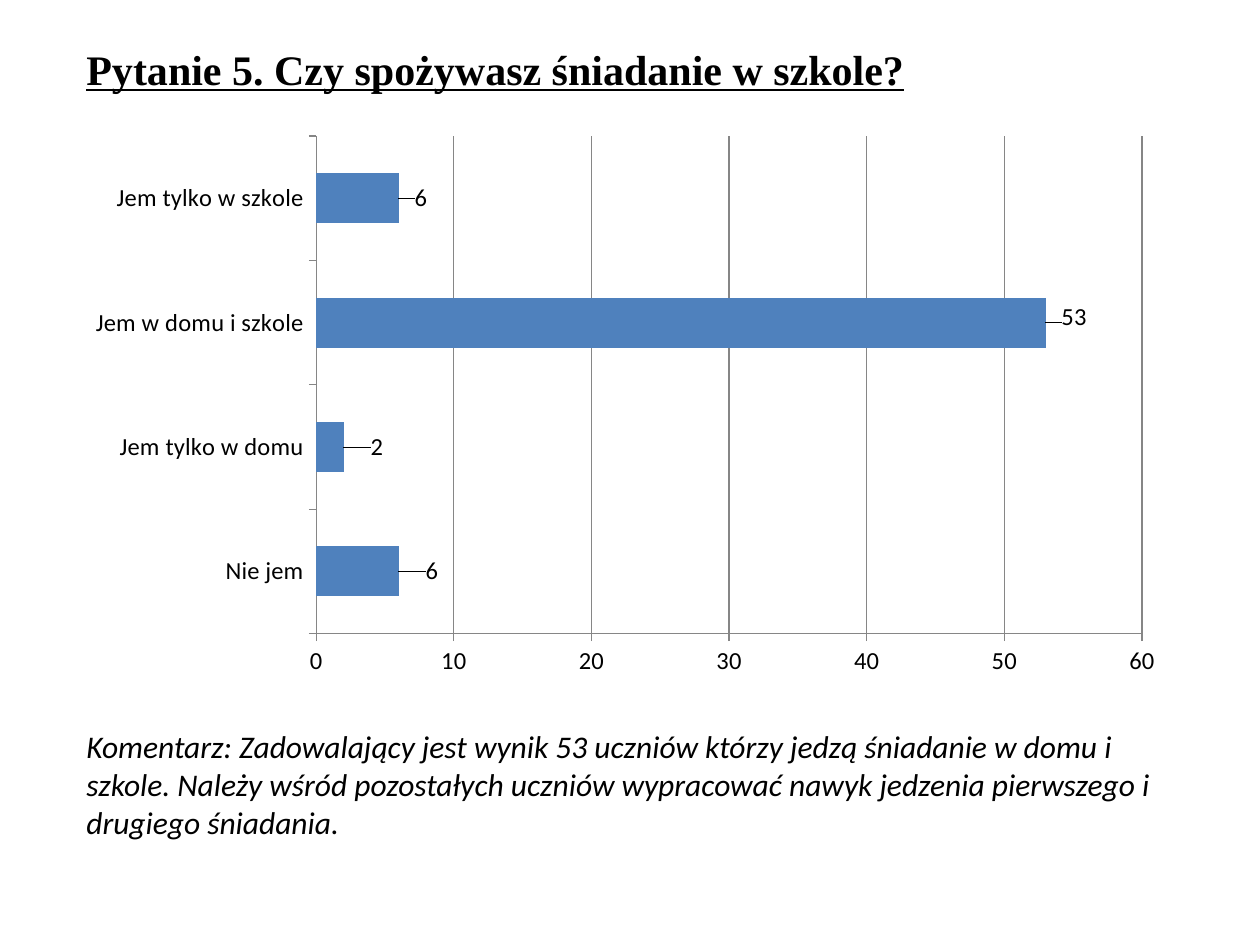
import pptx
import pptx.chart.data
import pptx.dml.color
import pptx.enum.chart
import pptx.oxml
import pptx.oxml.ns
import pptx.util

PX = 914400 / 126
THEME = {
    "text": pptx.dml.color.RGBColor.from_string("000000"),
    "bar": pptx.dml.color.RGBColor.from_string("4F81BD"),
    "line": pptx.dml.color.RGBColor.from_string("868686"),
    "title_font": "Times New Roman",
    "body_font": "Calibri",
    "title_size": pptx.util.Pt(24),
    "comment_size": pptx.util.Pt(18),
    "chart_size": pptx.util.Pt(14),
    "line_width": pptx.util.Pt(0.75),
}


def box(*lengths):
    return [pptx.util.Emu(round(n * PX)) for n in lengths]


def layout_xml(**values):
    parts = "".join(f'<c:{tag} val="{val}"/>' for tag, val in values.items())
    return pptx.oxml.parse_xml(
        f'<c:layout {pptx.oxml.ns.nsdecls("c")}>'
        f"<c:manualLayout>{parts}</c:manualLayout></c:layout>"
    )


prs = pptx.Presentation()
prs.slide_width, prs.slide_height = box(1260, 945)
s = prs.slides.add_slide(prs.slide_layouts[6])

texts = [
    (box(74, 37, 1121, 63), "Pytanie 5. Czy spożywasz śniadanie w szkole?",
     THEME["title_font"], THEME["title_size"], True),
    (box(74, 721, 1121, 127),
     "Komentarz: Zadowalający jest wynik 53 uczniów którzy jedzą śniadanie "
     "w domu i szkole. Należy wśród pozostałych uczniów wypracować nawyk "
     "jedzenia pierwszego i drugiego śniadania.",
     THEME["body_font"], THEME["comment_size"], False),
]
for place, text, font, size, is_title in texts:
    tf = s.shapes.add_textbox(*place).text_frame
    tf.word_wrap = True
    tf.text = text
    r = tf.paragraphs[0].runs[0]
    r.font.name = font
    r.font.size = size
    r.font.color.rgb = THEME["text"]
    r.font.bold = is_title
    r.font.underline = is_title
    r.font.italic = not is_title

data = pptx.chart.data.CategoryChartData()
data.categories = ["Nie jem", "Jem tylko w domu", "Jem w domu i szkole", "Jem tylko w szkole"]
data.add_series("Series 1", [6, 2, 53, 6])
chart = s.shapes.add_chart(
    pptx.enum.chart.XL_CHART_TYPE.BAR_CLUSTERED, *box(74, 125, 1101, 559), data
).chart
chart.has_title = False
chart.has_legend = False
chart.font.name = THEME["body_font"]
chart.font.size = THEME["chart_size"]
chart.font.color.rgb = THEME["text"]

plot = chart.plots[0]
plot.gap_width = 150
plot.vary_by_categories = False
series = plot.series[0]
series.format.fill.solid()
series.format.fill.fore_color.rgb = THEME["bar"]

value_axis, category_axis = chart.value_axis, chart.category_axis
value_axis.minimum_scale = 0
value_axis.maximum_scale = 60
value_axis.major_unit = 10
value_axis.has_major_gridlines = True
for axis in (value_axis, category_axis):
    axis.major_tick_mark = pptx.enum.chart.XL_TICK_MARK.OUTSIDE
for lined in (value_axis, category_axis, value_axis.major_gridlines):
    lined.format.line.color.rgb = THEME["line"]
    lined.format.line.width = THEME["line_width"]

plot_area = chart.element.find(".//" + pptx.oxml.ns.qn("c:plotArea"))
for old in plot_area.findall(pptx.oxml.ns.qn("c:layout")):
    plot_area.remove(old)
plot_area.insert(0, layout_xml(layoutTarget="inner", xMode="edge", yMode="edge",
                               x=0.22, y=0.02, w=0.75, h=0.89))

series.data_labels.show_value = True
label_shifts = [(0.02, 0), (0.02, 0), (0.01, -0.01), (0.01, 0)]
for i, (dx, dy) in enumerate(label_shifts):
    series.points[i].data_label.position = pptx.enum.chart.XL_LABEL_POSITION.OUTSIDE_END
for label, (dx, dy) in zip(series.data_labels._element.findall(pptx.oxml.ns.qn("c:dLbl")), label_shifts):
    label.insert(1, layout_xml(x=dx, y=dy))

prs.save("out.pptx")
